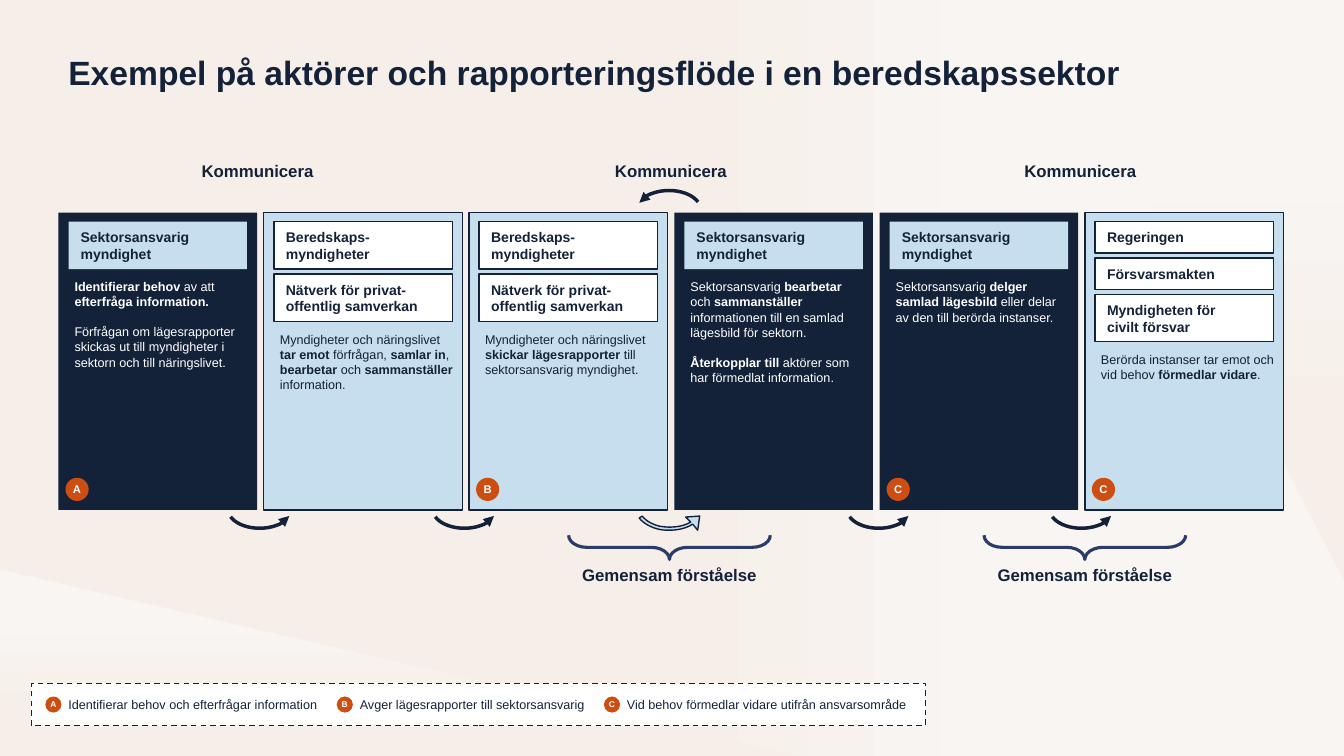
from lxml.etree import SubElement
from pptx import Presentation
from pptx.dml.color import RGBColor
from pptx.enum.dml import MSO_LINE
from pptx.enum.shapes import MSO_SHAPE
from pptx.enum.text import MSO_ANCHOR, PP_ALIGN
from pptx.oxml.ns import qn
from pptx.util import Inches, Pt

NAVY, BLUE, WHITE, ORANGE, INDIGO = "142239", "C6DEED", "FFFFFF", "CC4E13", "2C3C6A"
SAND, PALE = "F6EFE9", "F8F5F3"

LEFT, TOP, WIDTH, HEIGHT = 0.58, 2.11, 1.97, 2.95
PITCH = (10.76 - LEFT) / 5

SECTOR = ["Sektorsansvarig \vmyndighet"]
NETWORK = ["Beredskaps-myndigheter", "Nätverk för privat-offentlig samverkan"]
NATIONAL = ["Regeringen", "Försvarsmakten", "Myndigheten för \vcivilt försvar"]

# Dark column?, headers, body (** toggles bold), badge
COLUMNS = [
    (True, SECTOR, "**Identifierar behov **av att **efterfråga information.**\n"
     "Förfrågan om lägesrapporter skickas ut till myndigheter i sektorn och till näringslivet.", "A"),
    (False, NETWORK, "Myndigheter och näringslivet **tar emot **förfrågan, **samlar in**, "
     "**bearbetar** och **sammanställer** information.", None),
    (False, NETWORK, "Myndigheter och näringslivet **skickar lägesrapporter **till "
     "sektorsansvarig myndighet.", "B"),
    (True, SECTOR, "Sektorsansvarig **bearbetar** och **sammanställer** informationen till en "
     "samlad lägesbild för sektorn.\n**Återkopplar till **aktörer som har förmedlat information.", None),
    (True, SECTOR, "Sektorsansvarig **delger samlad lägesbild** eller delar av den till "
     "berörda instanser.", "C"),
    (False, NATIONAL, "Berörda instanser tar emot och vid behov **förmedlar vidare**.", "C"),
]
LEGEND = [
    (0.45, "A", "Identifierar behov och efterfrågar information", 2.69),
    (3.34, "B", "Avger lägesrapporter till sektorsansvarig", 2.59),
    (5.99, "C", "Vid behov förmedlar vidare utifrån ansvarsområde", 3.06),
]
# Two numbers are a line, six are a Bézier curve
RETURN_ARROW = [
    (6.94, 5.12), (6.8, 5.13), (6.85, 5.18), (6.77, 5.23, 6.64, 5.24, 6.54, 5.22),
    (6.46, 5.2, 6.4, 5.16, 6.37, 5.12), (6.34, 5.14), (6.38, 5.19, 6.45, 5.23, 6.53, 5.25),
    (6.57, 5.26, 6.61, 5.26, 6.64, 5.26), (6.73, 5.26, 6.81, 5.24, 6.87, 5.2), (6.92, 5.26),
]


def rgb(value):
    return RGBColor.from_string(value)


def style(sp, fill=None, line=None, width=1):
    sp.shadow.inherit = False
    if fill:
        sp.fill.solid()
        sp.fill.fore_color.rgb = rgb(fill)
    else:
        sp.fill.background()
    if line:
        sp.line.color.rgb = rgb(line)
        sp.line.width = Pt(width)
    else:
        sp.line.fill.background()


def gradient(fill, stops, angle):
    fill.gradient()
    fill.gradient_angle = angle
    for stop, (position, color) in zip(fill.gradient_stops, stops):
        stop.position = position
        stop.color.rgb = rgb(color)


def write(sp, text, size=9, color=NAVY, bold=False, align=PP_ALIGN.LEFT, anchor=MSO_ANCHOR.TOP,
          insets=(0.1, 0.05, 0.1, 0.05), wrap=True, spacing=None):
    """Fill a shape with text; ** toggles bold, \\n starts a paragraph, \\v breaks a line."""
    tf = sp.text_frame
    tf.word_wrap = wrap
    tf.vertical_anchor = anchor
    tf.margin_left, tf.margin_top, tf.margin_right, tf.margin_bottom = map(Inches, insets)
    for i, paragraph in enumerate(text.split("\n")):
        p = tf.add_paragraph() if i else tf.paragraphs[0]
        p.alignment = align
        if i:
            p.space_before = Pt(10.5)
        if spacing:
            p.line_spacing = spacing
        for j, part in enumerate(paragraph.split("**")):
            for k, piece in enumerate(part.split("\v")):
                if k:
                    p.add_line_break()
                if piece:
                    r = p.add_run()
                    r.text = piece
                    r.font.name = "Arial"
                    r.font.size = Pt(size)
                    r.font.bold = bold or j % 2 == 1
                    r.font.color.rgb = rgb(color)


def add_preset(s, kind, x, y, w, h, **look):
    sp = s.shapes.add_shape(kind, Inches(x), Inches(y), Inches(w), Inches(h))
    style(sp, **look)
    return sp


def add_label(s, text, x, y, w, h, **fmt):
    write(s.shapes.add_textbox(Inches(x), Inches(y), Inches(w), Inches(h)), text, **fmt)


def add_badge(s, letter, x, y, d, size):
    sp = add_preset(s, MSO_SHAPE.OVAL, x, y, d, d, fill=ORANGE)
    write(sp, letter, size=size, color=WHITE, bold=True, align=PP_ALIGN.CENTER,
          anchor=MSO_ANCHOR.MIDDLE, insets=(0, 0, 0, 0), wrap=False)


def add_outline(s, points):
    (x, y), *rest = [(Inches(px), Inches(py)) for px, py in points]
    builder = s.shapes.build_freeform(x, y)
    builder.add_line_segments(rest, close=True)
    sp = builder.convert_to_shape()
    style(sp)
    return sp


def flatten(segments, steps=8):
    """Turn lines and Bézier curves into a list of points."""
    points = []
    for segment in segments:
        if len(segment) == 2:
            points.append(segment)
            continue
        nodes = [points[-1], segment[:2], segment[2:4], segment[4:]]
        for n in range(1, steps + 1):
            t = n / steps
            weights = ((1 - t) ** 3, 3 * t * (1 - t) ** 2, 3 * t * t * (1 - t), t ** 3)
            points.append(tuple(sum(w * node[axis] for w, node in zip(weights, nodes))
                                for axis in (0, 1)))
    return points


def add_column(s, x, dark, headers, body, badge):
    column = add_preset(s, MSO_SHAPE.RECTANGLE, x, TOP, WIDTH, HEIGHT,
                        fill=NAVY if dark else BLUE, line=None if dark else NAVY)
    y = TOP + 0.09
    for header in headers:
        h = 0.31 if header in NATIONAL[:2] else 0.47
        sp = add_preset(s, MSO_SHAPE.RECTANGLE, x + 0.1, y, 1.77, h,
                        fill=BLUE if dark else WHITE, line=None if dark else NAVY)
        write(sp, header, size=10, bold=True, anchor=MSO_ANCHOR.MIDDLE, insets=(0.12, 0, 0.08, 0))
        y += h + 0.05
    write(column, body, color=WHITE if dark else NAVY, insets=(0.16, y + 0.05 - TOP, 0.08, 0.16))
    if badge:
        add_badge(s, badge, x + 0.07, 4.74, 0.23, 8)


def add_arc_arrow(s, x, y, rotation=0):
    sp = add_preset(s, MSO_SHAPE.ARC, x, y, 0.63, 0.38, line=NAVY, width=2.5)
    sp.adjustments[0], sp.adjustments[1] = 115.805, 207.119
    sp.rotation = rotation
    SubElement(sp.line._get_or_add_ln(), qn("a:headEnd"), type="triangle")


def add_brace(s, center):
    sp = add_preset(s, MSO_SHAPE.LEFT_BRACE, center - 0.12, 4.43, 0.24, 2, line=INDIGO, width=2.25)
    sp.adjustments[0] = 0.75
    sp.rotation = 270
    add_label(s, "Gemensam förståelse", center - 1.18, 5.55, 2.36, 0.3,
              size=12, bold=True, align=PP_ALIGN.CENTER)


def add_backdrop(s):
    gradient(s.background.fill, [(0.5, SAND), (0.75, PALE)], 0)
    for corners in ([(0, 5.65), (7.94, 7.5), (0, 7.5)], [(10.36, 0), (13.33, 5.75), (13.33, 0)]):
        gradient(add_outline(s, corners).fill, [(0.25, PALE), (0.75, SAND)], 270)


def add_legend(s):
    box = add_preset(s, MSO_SHAPE.RECTANGLE, 0.31, 6.78, 8.87, 0.42, fill=WHITE, line=NAVY)
    box.line.dash_style = MSO_LINE.DASH
    for x, letter, text, w in LEGEND:
        add_badge(s, letter, x, 6.91, 0.16, 6)
        add_label(s, text, x + 0.13, 6.86, w, 0.25)


def main():
    prs = Presentation()
    prs.slide_width, prs.slide_height = Inches(13.33), Inches(7.5)
    s = prs.slides.add_slide(prs.slide_layouts[6])
    add_backdrop(s)
    add_label(s, "Exempel på aktörer och rapporteringsflöde i en beredskapssektor",
              LEFT, 0.43, 12.1, 0.62, size=24, bold=True, anchor=MSO_ANCHOR.MIDDLE, spacing=0.9)
    style(add_outline(s, flatten(RETURN_ARROW)), fill=BLUE, line=NAVY)
    add_legend(s)
    for x in (1.73, 5.83, 9.89):
        add_label(s, "Kommunicera", x, 1.55, 1.65, 0.3, size=12, bold=True, align=PP_ALIGN.CENTER)
    for i, column in enumerate(COLUMNS):
        add_column(s, LEFT + i * PITCH, *column)
    add_arc_arrow(s, 6.32, 1.89)
    for x in (2.26, 4.29, 8.4, 10.41):
        add_arc_arrow(s, x, 4.86, 180)
    for center in (6.64, 10.76):
        add_brace(s, center)
    prs.save("out.pptx")


if __name__ == "__main__":
    main()
